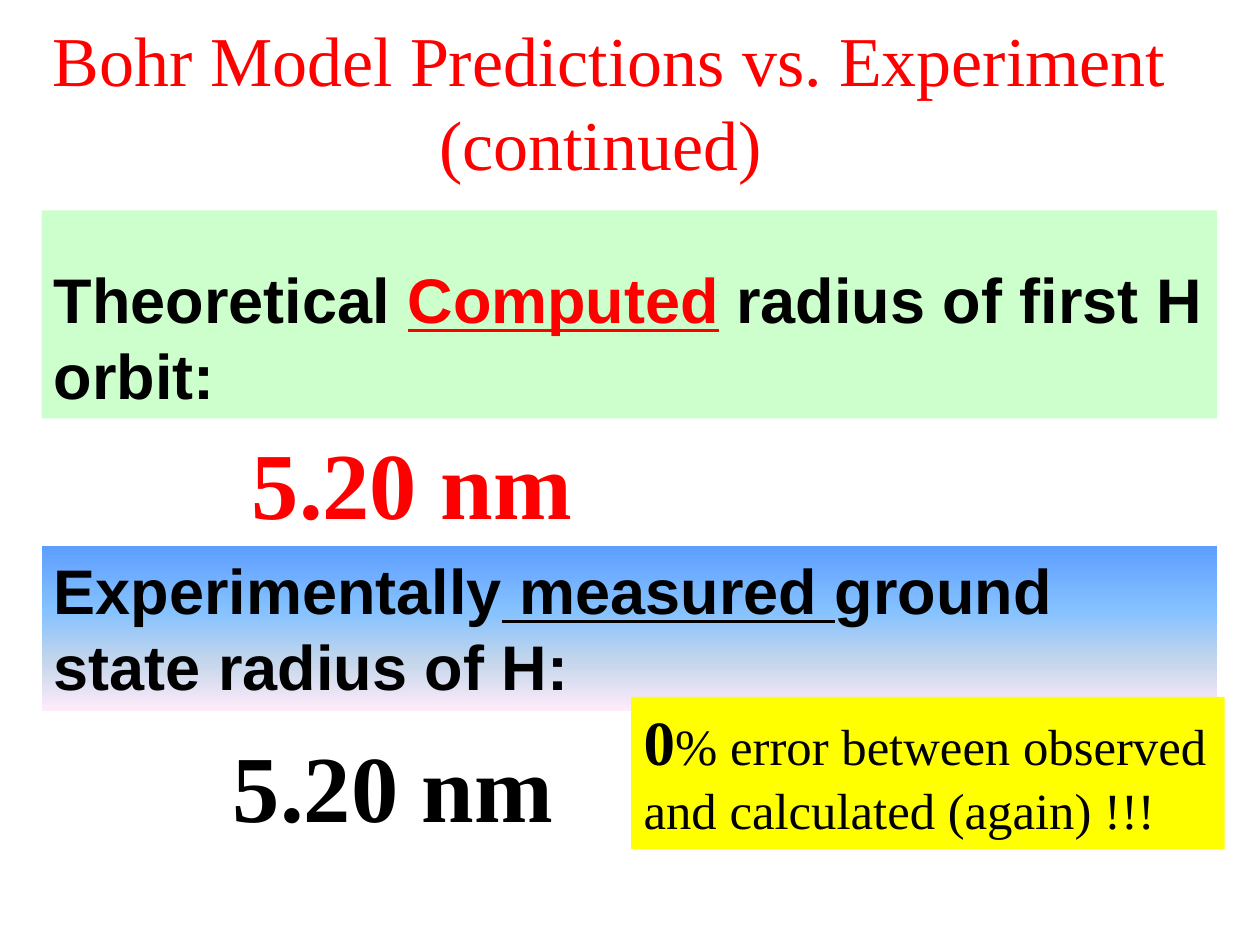
from lxml.etree import SubElement
from pptx import Presentation
from pptx.dml.color import RGBColor
from pptx.enum.shapes import MSO_SHAPE
from pptx.enum.text import MSO_ANCHOR, PP_ALIGN
from pptx.oxml.ns import qn
from pptx.util import Inches, Pt

RED, BLACK = "FF0000", "000000"
SERIF = {"name": "Times New Roman", "color": BLACK}
HEAD = {"name": "Arial", "size": 36, "bold": True, "color": BLACK}
VALUE = {**SERIF, "size": 54, "bold": True}
NOTE = {**SERIF, "size": 29}
SKY = [(0, "5E9EFF"), (40, "85C2FF"), (70, "C4D6EB"), (100, "FFEBFA")]
EDGE, BAND = 0.33, 9.33

TITLE = [("Bohr Model Predictions vs. Experiment (continued) ", {**SERIF, "size": 40, "color": RED})]
BOXES = [
    ((EDGE, 1.67, BAND, 1.65), "CCFFCC", MSO_ANCHOR.BOTTOM, [
        ("Theoretical ", HEAD),
        ("Computed", {**HEAD, "color": RED, "underline": True}),
        (" radius of first H orbit:", HEAD)]),
    ((EDGE, 4.33, BAND, 1.31), SKY, MSO_ANCHOR.TOP, [
        ("Experimentally", HEAD),
        (" measured ", {**HEAD, "underline": True}),
        ("ground state radius of H:", HEAD)]),
    ((1.9, 3.32, 3.25, 1.01), None, MSO_ANCHOR.TOP, [("5.20 nm", {**VALUE, "color": RED})]),
    ((1.75, 5.73, 3.42, 1.01), None, MSO_ANCHOR.TOP, [("5.20 nm", VALUE)]),
    ((5.01, 5.53, 4.71, 1.21), "FFFF00", MSO_ANCHOR.TOP, [
        ("0", {**NOTE, "size": 36, "bold": True}),
        ("% error between observed and calculated (again) !!!", NOTE)]),
]


def rgb(code):
    return RGBColor.from_string(code)


def write(sp, runs, anchor, align):
    tf = sp.text_frame
    tf.word_wrap = True
    tf.vertical_anchor = anchor
    p = tf.paragraphs[0]
    p.alignment = align
    for text, style in runs:
        r = p.add_run()
        r.text = text
        for key, value in style.items():
            if key == "color":
                r.font.color.rgb = rgb(value)
            else:
                setattr(r.font, key, Pt(value) if key == "size" else value)


def paint(sp, fill):
    if isinstance(fill, str):
        sp.fill.solid()
        sp.fill.fore_color.rgb = rgb(fill)
        return
    sp.fill.gradient()
    sp.fill.gradient_angle = 270
    stops = next(sp._element.iter(qn("a:gsLst")))
    for old in list(stops):
        stops.remove(old)
    for percent, code in fill:
        gs = SubElement(stops, qn("a:gs"), pos=str(percent * 1000))
        SubElement(gs, qn("a:srgbClr"), val=code)


prs = Presentation()
prs.slide_width, prs.slide_height = Inches(10), Inches(7.5)
s = prs.slides.add_slide(prs.slide_layouts[5])

title = s.shapes.title
title.left, title.top, title.width, title.height = map(Inches, (0, 0.17, 9.67, 1.25))
write(title, TITLE, MSO_ANCHOR.MIDDLE, PP_ALIGN.CENTER)

for place, fill, anchor, runs in BOXES:
    at = map(Inches, place)
    if fill:
        sp = s.shapes.add_shape(MSO_SHAPE.RECTANGLE, *at)
        sp.shadow.inherit = False
        sp.line.fill.background()
        paint(sp, fill)
    else:
        sp = s.shapes.add_textbox(*at)
    write(sp, runs, anchor, PP_ALIGN.LEFT)

prs.save("out.pptx")
